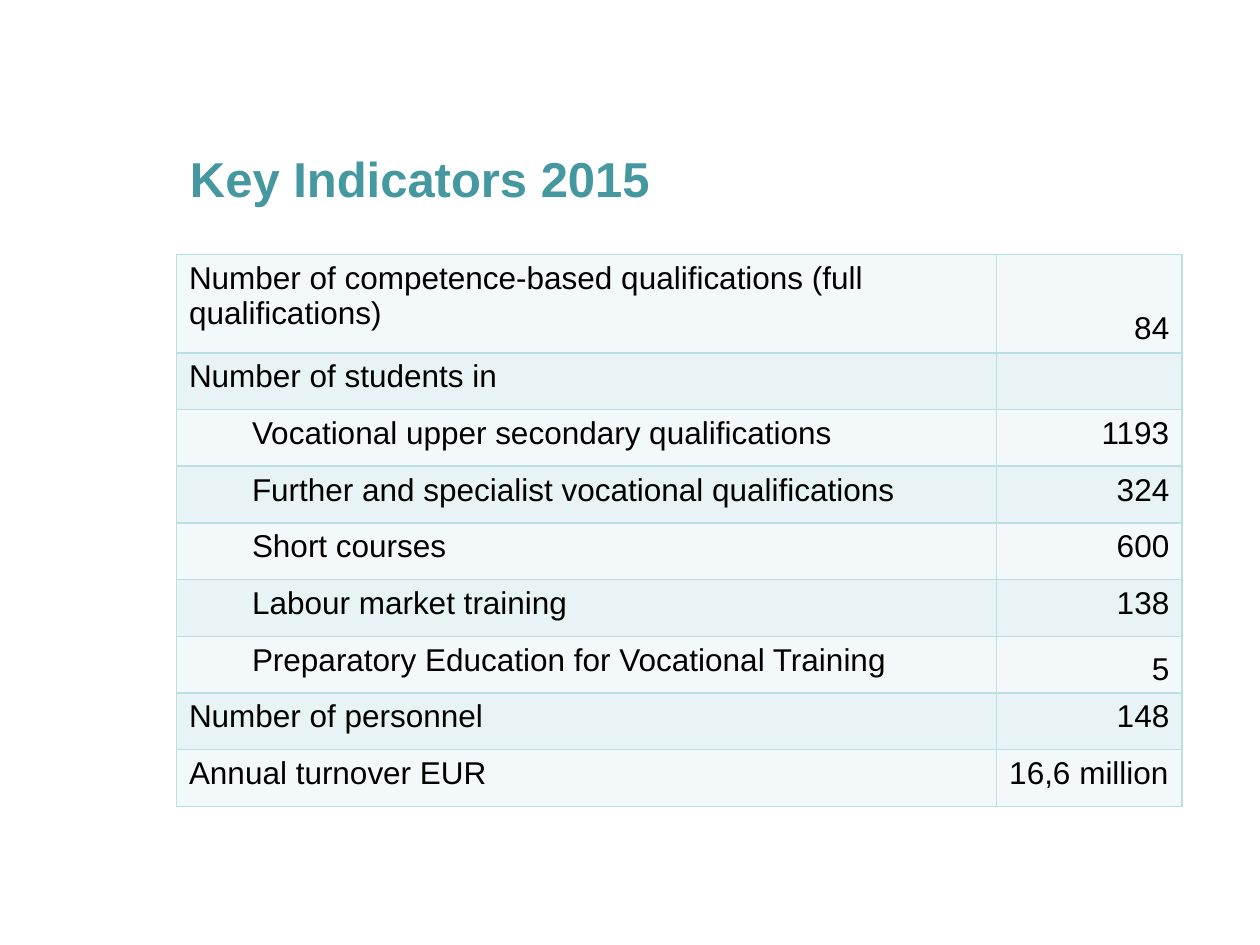
import pptx
import pptx.dml.color
import pptx.enum.text
import pptx.oxml.ns
import pptx.util
import lxml.etree

COLOURS = {"title": "4597A0", "text": "000000", "border": "BBE0E3",
           "light": "F3F9FA", "dark": "E7F3F4"}
INDICATORS = [
    ("Number of competence-based qualifications (full qualifications)", "84", 0),
    ("Number of students in", "", 0),
    ("Vocational upper secondary qualifications", "1193", 1),
    ("Further and specialist vocational qualifications", "324", 1),
    ("Short courses", "600", 1),
    ("Labour market training", "138", 1),
    ("Preparatory Education for Vocational Training", "5", 1),
    ("Number of personnel", "148", 0),
    ("Annual turnover EUR", "16,6 million", 0),
]
BOTTOM_VALUES = ("84", "5")


def style_font(font, size, colour, bold=False):
    font.name = "Arial"
    font.size = pptx.util.Pt(size)
    font.bold = bold
    font.color.rgb = pptx.dml.color.RGBColor.from_string(COLOURS[colour])


def add_borders(cell):
    properties = cell._tc.get_or_add_tcPr()
    qualify = pptx.oxml.ns.qn
    for position, side in enumerate(("lnL", "lnR", "lnT", "lnB")):
        line = lxml.etree.Element(qualify("a:" + side), w=str(pptx.util.Pt(1)))
        fill = lxml.etree.SubElement(line, qualify("a:solidFill"))
        lxml.etree.SubElement(fill, qualify("a:srgbClr"), val=COLOURS["border"])
        properties.insert(position, line)


deck = pptx.Presentation()
deck.slide_width = pptx.util.Inches(10)
deck.slide_height = pptx.util.Inches(7.5)
page = deck.slides.add_slide(deck.slide_layouts[6])

left = int(deck.slide_width * 0.14)
width = int(deck.slide_width * 0.8)
label_width = int(deck.slide_width * 0.65)
first_height = pptx.util.Inches(0.78)
row_height = pptx.util.Inches(0.45)

title_box = page.shapes.add_textbox(left + pptx.util.Inches(0.01), pptx.util.Inches(1.09),
                                    width, pptx.util.Inches(0.77))
title_box.text_frame.word_wrap = True
title_box.text_frame.margin_top = pptx.util.Inches(0.09)
title_para = title_box.text_frame.paragraphs[0]
title_para.text = "Key Indicators 2015"
style_font(title_para.font, 28, "title", bold=True)

table = page.shapes.add_table(
    len(INDICATORS), 2, left, pptx.util.Inches(2.02), width,
    first_height + row_height * (len(INDICATORS) - 1)).table
table.first_row = False
table.horz_banding = False
table.columns[0].width = pptx.util.Inches(6.51)
table.columns[1].width = pptx.util.Inches(1.47)

for index, (label, value, level) in enumerate(INDICATORS):
    table.rows[index].height = row_height if index else first_height
    band = COLOURS["dark" if index % 2 else "light"]
    for column, wording in enumerate((label, value)):
        cell = table.cell(index, column)
        cell.fill.solid()
        cell.fill.fore_color.rgb = pptx.dml.color.RGBColor.from_string(band)
        add_borders(cell)
        para = cell.text_frame.paragraphs[0]
        para.text = wording
        style_font(para.font, 18, "text")
        if column == 0 and level:
            para.level = level
            properties = para._p.get_or_add_pPr()
            properties.set("marL", str(pptx.util.Inches(0.5)))
            properties.set("indent", "0")
        if column == 1 and index < len(INDICATORS) - 1:
            para.alignment = pptx.enum.text.PP_ALIGN.RIGHT
        if column == 1 and value in BOTTOM_VALUES:
            cell.vertical_anchor = pptx.enum.text.MSO_ANCHOR.BOTTOM

deck.save("out.pptx")
